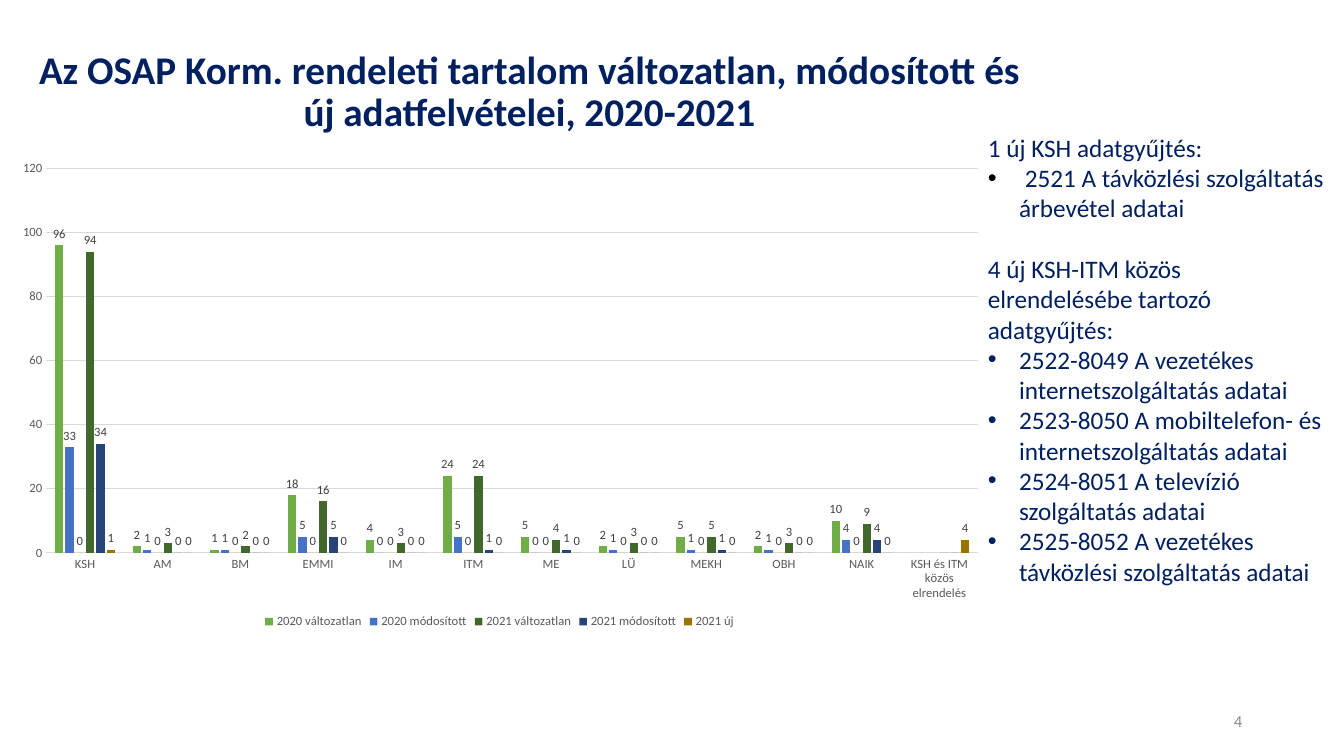
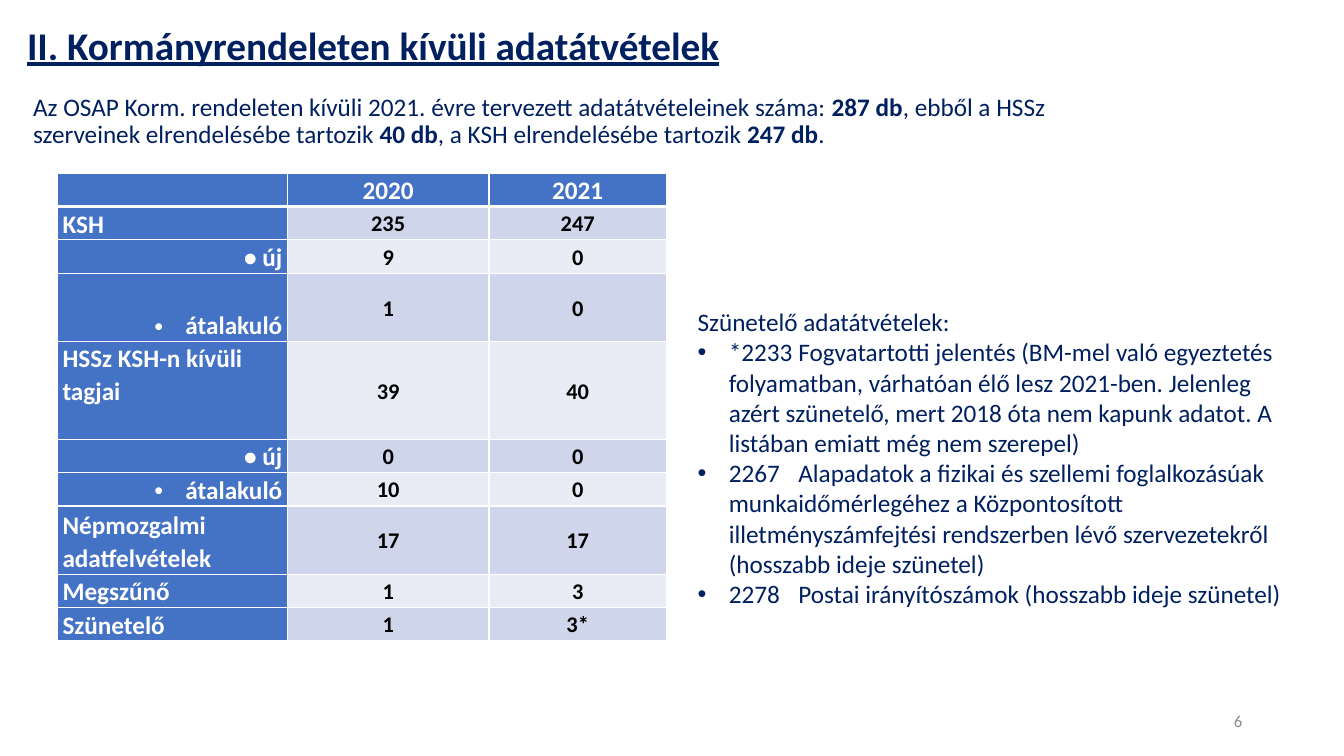
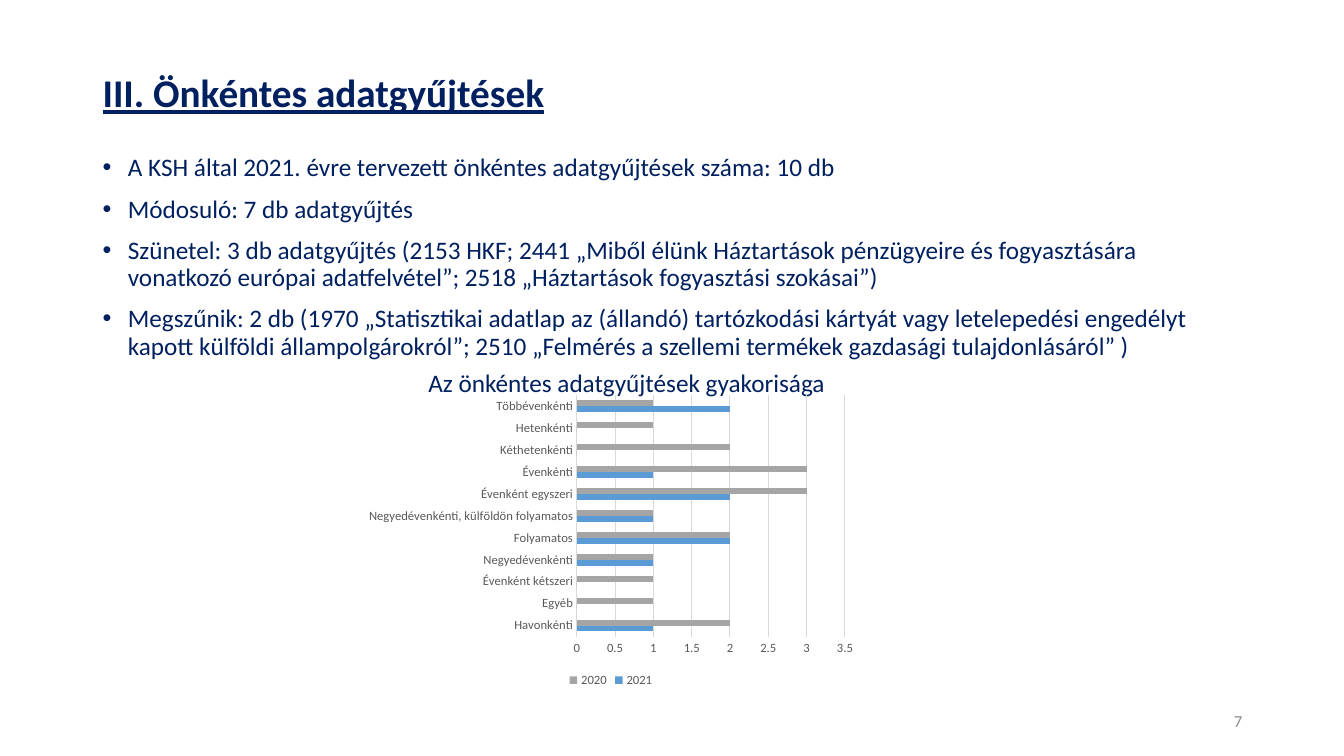
from lxml import etree
from pptx import Presentation
from pptx.chart.data import CategoryChartData
from pptx.dml.color import RGBColor
from pptx.enum.chart import XL_CHART_TYPE as ChartType, XL_LABEL_POSITION as LabelPos
from pptx.enum.chart import XL_LEGEND_POSITION as LegendPos, XL_TICK_MARK as TickMark
from pptx.enum.text import MSO_ANCHOR as Anchor, PP_ALIGN as Align
from pptx.oxml import parse_xml
from pptx.oxml.ns import nsdecls, qn
from pptx.util import Inches, Pt

NAVY, WHITE, BLACK = "002060", "FFFFFF", "000000"
BLUE, BAND_DARK, BAND_LIGHT = "4472C4", "CFD5EA", "E9EBF5"
GRAY, AXIS_TEXT, LABEL_TEXT, GRID = "8C8C8C", "595959", "404040", "D9D9D9"
FONT = "Calibri"


def rgb(color):
    return RGBColor.from_string(color)


def style_font(font, size, color, bold=False, underline=False):
    font.name = FONT
    font.size = Pt(size)
    font.bold = bold
    font.underline = underline
    font.color.rgb = rgb(color)


def write(paragraph, content, size=18, color=NAVY, bold=False, underline=False,
          align=Align.LEFT, spacing=1, before=0, bullet=None):
    if bullet:
        margin, hang = bullet
        props = paragraph._p.get_or_add_pPr()
        props.set("marL", str(Inches(margin)))
        props.set("indent", str(-Inches(hang)))
        etree.SubElement(props, qn("a:buFont")).set("typeface", "Arial")
        etree.SubElement(props, qn("a:buChar")).set("char", "•")
    paragraph.alignment = align
    paragraph.line_spacing = spacing
    if before:
        paragraph.space_before = Pt(before)
    for part in [content] if isinstance(content, str) else content:
        words, change = (part, {}) if isinstance(part, str) else part
        run = paragraph.add_run()
        run.text = words
        look = {"size": size, "color": color, "bold": bold, "underline": underline}
        style_font(run.font, **{**look, **change})


class Deck:
    def __init__(self):
        self.presentation = Presentation()
        self.presentation.slide_width = Inches(13.33)
        self.presentation.slide_height = Inches(7.5)

    def new_slide(self, number):
        self.slide = self.presentation.slides.add_slide(self.presentation.slide_layouts[6])
        self.text((9.42, 6.95, 3, 0.4), [number], anchor=Anchor.MIDDLE,
                  size=12, color=GRAY, align=Align.RIGHT)

    def text(self, place, paragraphs, anchor=Anchor.TOP, before=0, **look):
        frame = self.slide.shapes.add_textbox(*map(Inches, place)).text_frame
        frame.word_wrap = True
        frame.vertical_anchor = anchor
        for index, item in enumerate(paragraphs):
            content, change = item if isinstance(item, tuple) else (item, {})
            paragraph = frame.add_paragraph() if index else frame.paragraphs[0]
            gap = before if index else 0
            write(paragraph, content, **{"before": gap, **look, **change})

    def title(self, place, words, **look):
        self.text(place, [words], anchor=Anchor.MIDDLE, size=28, bold=True, spacing=0.9, **look)

    def chart(self, place, kind, categories, series, gap, overlap=0, labels=False):
        source = CategoryChartData()
        source.categories = categories
        for name, _, values in series:
            source.add_series(name, values)
        frame = self.slide.shapes.add_chart(kind, *map(Inches, place), source)
        chart = frame.chart
        style_font(chart.font, 10, BLACK)
        chart.has_title = False
        chart.has_legend = True
        chart.legend.position = LegendPos.BOTTOM
        chart.legend.include_in_layout = False
        style_font(chart.legend.font, 9, AXIS_TEXT)
        for axis in (chart.category_axis, chart.value_axis):
            axis.major_tick_mark = axis.minor_tick_mark = TickMark.NONE
            style_font(axis.tick_labels.font, 9, AXIS_TEXT)
        chart.value_axis.format.line.fill.background()
        chart.value_axis.has_major_gridlines = True
        for line in (chart.category_axis.format.line, chart.value_axis.major_gridlines.format.line):
            line.color.rgb = rgb(GRID)
            line.width = Pt(0.75)
        plot = chart.plots[0]
        plot.gap_width = gap
        plot.overlap = overlap
        plot.vary_by_categories = False
        for bars, (_, color, _) in zip(plot.series, series):
            bars.format.fill.solid()
            bars.format.fill.fore_color.rgb = rgb(color)
            bars.invert_if_negative = False
            if labels:
                bars.data_labels.show_value = True
                bars.data_labels.position = LabelPos.OUTSIDE_END
                style_font(bars.data_labels.font, 9, LABEL_TEXT)
        return chart

    def table(self, place, widths, heights, rows):
        left, top = place
        size = (sum(widths), sum(heights))
        table = self.slide.shapes.add_table(
            len(rows), len(widths), *map(Inches, (left, top, *size))).table
        for column, width in zip(table.columns, widths):
            column.width = Inches(width)
        for row, height in zip(table.rows, heights):
            row.height = Inches(height)
        for r, row in enumerate(rows):
            for c, item in enumerate(row):
                content, look = item if isinstance(item, tuple) else (item, {})
                self.cell(table.cell(r, c), content, r, c, **look)

    def cell(self, cell, content, r, c, anchor=Anchor.BOTTOM, **look):
        header = r == 0 or c == 0
        cell.margin_left = cell.margin_right = Inches(0.05)
        cell.margin_top = cell.margin_bottom = 0
        cell.vertical_anchor = anchor if header else Anchor.MIDDLE
        base = {"size": 18 if header else 16, "color": WHITE if header else BLACK,
                "align": Align.LEFT if c == 0 else Align.CENTER}
        if content:
            write(cell.text_frame.paragraphs[0], content, bold=True, spacing=1.07,
                  **{**base, **look})
        props = cell._tc.get_or_add_tcPr()
        for side in "LRTB":
            heavy = (r == 0 and side == "B") or (r == 1 and side == "T")
            props.append(parse_xml(
                f'<a:ln{side} {nsdecls("a")} w="{Pt(3 if heavy else 1)}">'
                f'<a:solidFill><a:srgbClr val="{WHITE}"/></a:solidFill></a:ln{side}>'))
        cell.fill.solid()
        cell.fill.fore_color.rgb = rgb(BLUE if header else BAND_DARK if r % 2 else BAND_LIGHT)


def place_plot(chart, x, y, w, h):
    area = chart._chartSpace.xpath("c:chart/c:plotArea")[0]
    for old in area.findall(qn("c:layout")):
        area.remove(old)
    sizes = "".join(f'<c:{tag} val="{value}"/>' for tag, value in zip("xywh", (x, y, w, h)))
    area.insert(0, parse_xml(
        f'<c:layout {nsdecls("c")}><c:manualLayout><c:layoutTarget val="inner"/>'
        f'<c:xMode val="edge"/><c:yMode val="edge"/>{sizes}</c:manualLayout></c:layout>'))


def deleted(tag, index):
    return parse_xml(f'<c:{tag} {nsdecls("c")}><c:idx val="{index}"/><c:delete val="1"/></c:{tag}>')


def survey_changes(deck):
    deck.new_slide("4")
    deck.title((0.16, 0.35, 10.18, 1.14),
               "Az OSAP Korm. rendeleti tartalom változatlan, módosított és "
               "új adatfelvételei, 2020-2021", align=Align.CENTER)
    bodies = ["KSH", "AM", "BM", "EMMI", "IM", "ITM", "ME", "LÜ", "MEKH", "OBH", "NAIK",
              "KSH és ITM közös elrendelés"]
    chart = deck.chart((0.1, 1.52, 9.71, 4.76), ChartType.COLUMN_CLUSTERED, bodies, [
        ("2020 változatlan", "70AD47", [96, 2, 1, 18, 4, 24, 5, 2, 5, 2, 10, None]),
        ("2020 módosított", BLUE, [33, 1, 1, 5, 0, 5, 0, 1, 1, 1, 4, None]),
        ("Series 3", "FFC000", [0] * 11 + [None]),
        ("2021 változatlan", "43682B", [94, 3, 2, 16, 3, 24, 4, 3, 5, 3, 9, 0]),
        ("2021 módosított", "264478", [34, 0, 0, 5, 0, 1, 1, 0, 1, 0, 4, 0]),
        ("2021 új", "997300", [1] + [0] * 10 + [4]),
    ], gap=219, overlap=-27, labels=True)
    place_plot(chart, 0.037, 0.032, 0.952, 0.801)
    chart._chartSpace.xpath("c:chart/c:legend/c:legendPos")[0].addnext(deleted("legendEntry", 2))
    for index in (3, 4):
        chart.plots[0].series[index].data_labels._element.insert(0, deleted("dLbl", 11))
    item = {"bullet": (0.31, 0.31)}
    deck.text((9.7, 1.26, 3.53, 5.86), [
        "1 új KSH adatgyűjtés:",
        ([(" ", {"color": BLACK}), "2521 A távközlési szolgáltatás árbevétel adatai"], item),
        ("4 új KSH-ITM közös elrendelésébe tartozó adatgyűjtés:", {"before": 22}),
        ("2522-8049 A vezetékes internetszolgáltatás adatai", item),
        ("2523-8050 A mobiltelefon- és internetszolgáltatás adatai", item),
        ("2524-8051 A televízió szolgáltatás adatai", item),
        ("2525-8052 A vezetékes távközlési szolgáltatás adatai", item),
    ])


def data_transfers(deck):
    deck.new_slide("6")
    deck.title((0.17, 0.16, 8.33, 0.62), "II. Kormányrendeleten kívüli adatátvételek",
               underline=True)
    strong = {"bold": True}
    deck.text((0.23, 0.89, 10.77, 0.67), [[
        "Az OSAP Korm. rendeleten kívüli 2021. évre tervezett adatátvételeinek száma: ",
        ("287 db", strong), ", ebből a HSSz szerveinek elrendelésébe tartozik ",
        ("40 db", strong), ", a KSH elrendelésébe tartozik ", ("247 db", strong), ".",
    ]], spacing=0.9)
    new = ("• új", {"align": Align.RIGHT})
    changing = ("átalakuló", {"align": Align.RIGHT, "bullet": (0, 0.31)})
    low, double, triple = 0.33, 0.68, 0.97
    deck.table((0.57, 1.72), [2.28, 2, 1.76],
               [low, low, low, double, triple, low, low, double, low, low], [
        ["", "2020", "2021"],
        ["KSH", "235", "247"],
        [new, "9", "0"],
        [changing, "1", "0"],
        [("HSSz KSH-n kívüli tagjai", {"anchor": Anchor.TOP}), "39", "40"],
        [new, "0", "0"],
        [changing, "10", "0"],
        ["Népmozgalmi adatfelvételek", "17", "17"],
        ["Megszűnő", "1", "3"],
        ["Szünetelő", "1", "3*"],
    ])
    item = {"bullet": (0.31, 0.31)}
    deck.text((6.82, 2.99, 6.06, 3.74), [
        "Szünetelő adatátvételek:",
        ("*2233\tFogvatartotti jelentés (BM-mel való egyeztetés folyamatban, várhatóan élő "
         "lesz 2021-ben. Jelenleg azért szünetelő, mert 2018 óta nem kapunk adatot. "
         "A listában emiatt még nem szerepel)", item),
        ("2267\tAlapadatok a fizikai és szellemi foglalkozásúak munkaidőmérlegéhez a "
         "Központosított illetményszámfejtési rendszerben lévő szervezetekről "
         "(hosszabb ideje szünetel)", item),
        ("2278\tPostai irányítószámok (hosszabb ideje szünetel)", item),
    ])


def voluntary_surveys(deck):
    deck.new_slide("7")
    deck.title((0.92, 0.4, 11.5, 1.09), "III. Önkéntes adatgyűjtések", underline=True)
    deck.text((0.92, 1.49, 11.5, 5.07), [
        "A KSH által 2021. évre tervezett önkéntes adatgyűjtések száma: 10 db",
        "Módosuló: 7 db adatgyűjtés",
        "Szünetel: 3 db adatgyűjtés (2153 HKF; 2441 „Miből élünk Háztartások pénzügyeire és "
        "fogyasztására vonatkozó európai adatfelvétel”; 2518 „Háztartások fogyasztási szokásai”)",
        "Megszűnik: 2 db (1970 „Statisztikai adatlap az (állandó) tartózkodási kártyát vagy "
        "letelepedési engedélyt kapott külföldi állampolgárokról”; 2510 „Felmérés a szellemi "
        "termékek gazdasági tulajdonlásáról” )",
    ], spacing=0.9, before=10, bullet=(0.25, 0.25))
    deck.text((4.15, 3.59, 4.17, 0.4), ["Az önkéntes adatgyűjtések gyakorisága"])
    frequencies = ["Havonkénti", "Egyéb", "Évenként kétszeri", "Negyedévenkénti", "Folyamatos",
                   "Negyedévenkénti, külföldön folyamatos", "Évenként egyszeri", "Évenkénti",
                   "Kéthetenkénti", "Hetenkénti", "Többévenkénti"]
    deck.chart((3.56, 3.86, 5, 3), ChartType.BAR_CLUSTERED, frequencies, [
        ("2021", "5B9BD5", [1, 0, 0, 1, 2, 1, 2, 1, 0, 0, 2]),
        ("2020", "A5A5A5", [2, 1, 1, 1, 2, 1, 3, 3, 2, 1, 1]),
    ], gap=182)


def main():
    deck = Deck()
    survey_changes(deck)
    data_transfers(deck)
    voluntary_surveys(deck)
    deck.presentation.save("out.pptx")


if __name__ == "__main__":
    main()
